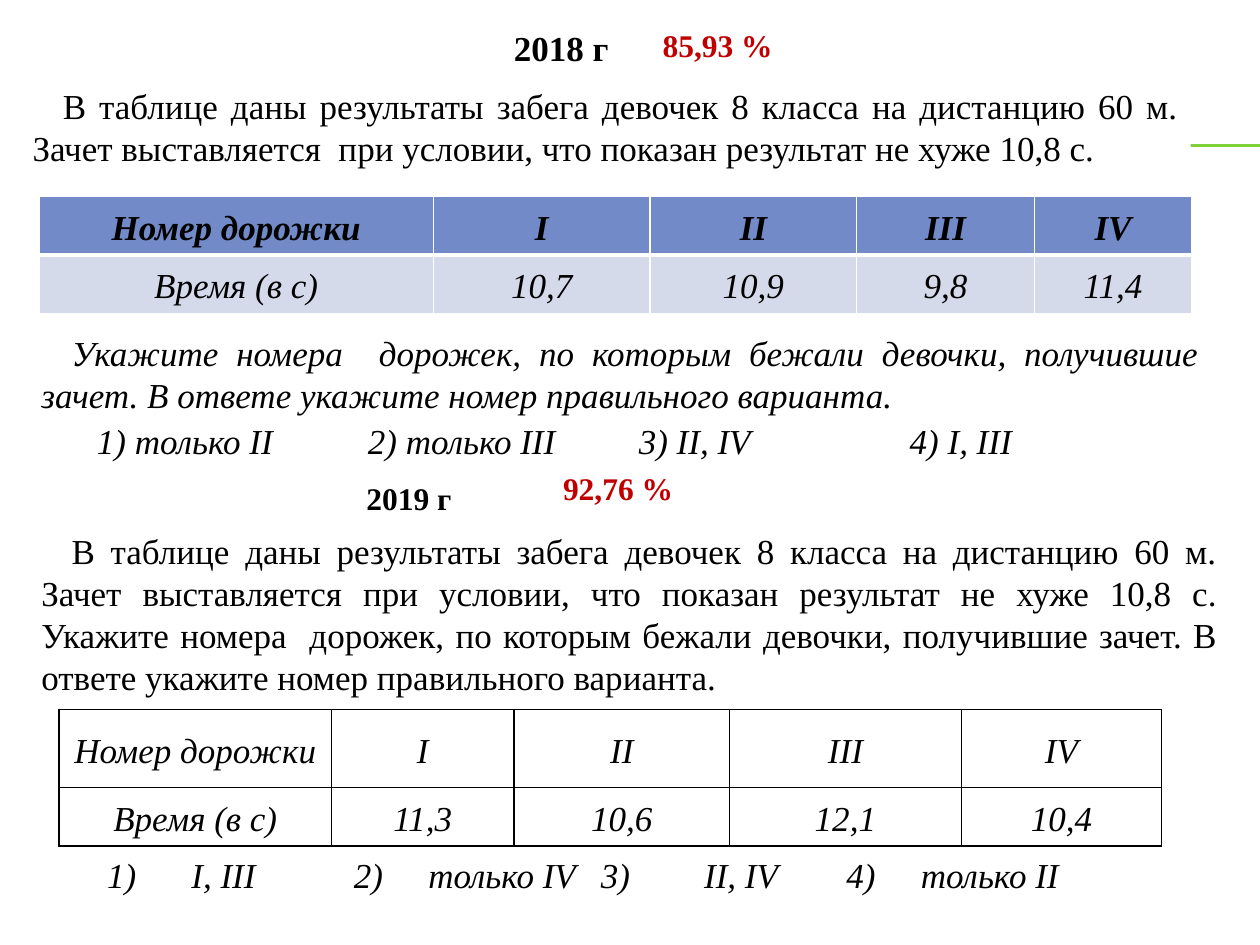
import pptx
import pptx.util
import pptx.dml.color
import pptx.enum.text
import pptx.oxml
import pptx.oxml.ns
import lxml.etree

Inches = pptx.util.Inches
Pt = pptx.util.Pt
Align = pptx.enum.text.PP_ALIGN
Anchor = pptx.enum.text.MSO_ANCHOR
Fit = pptx.enum.text.MSO_AUTO_SIZE
color = pptx.dml.color.RGBColor.from_string
qn = pptx.oxml.ns.qn

plain = {"name": "Times New Roman", "size": Pt(20), "bold": False, "italic": False}
slant = plain | {"italic": True}
strong = plain | {"bold": True}
small = strong | {"size": Pt(18)}
head = slant | {"bold": True}

left = {"alignment": Align.LEFT}
block = {"alignment": Align.JUSTIFY}
center = {"alignment": Align.CENTER, "line_spacing": 1.15, "space_before": Pt(3.4)}


def write(frame, text, font, layout, ink="000000", indent=0):
    """Put one formatted paragraph in a text frame."""
    para = frame.paragraphs[0]
    for key, value in layout.items():
        setattr(para, key, value)
    if indent:
        para._p.get_or_add_pPr().set("indent", str(Inches(indent)))
    run = para.add_run()
    run.text = text
    for key, value in font.items():
        setattr(run.font, key, value)
    run.font.color.rgb = color(ink)


def grid(at, cols, rows, texts, fonts, layout, pads, fills, edge=None, rule=1, indents={}):
    """Add a table; rule is the width in points of the line under row one."""
    size = [Inches(v) for v in (*at, sum(cols), sum(rows))]
    table = slide.shapes.add_table(len(rows), len(cols), *size).table
    table.first_row = table.horz_banding = False
    for col, width in zip(table.columns, cols):
        col.width = Inches(width)
    for r, row in enumerate(table.rows):
        row.height = Inches(rows[r])
        for c, cell in enumerate(row.cells):
            cell.margin_left = cell.margin_right = Inches(pads[0])
            cell.margin_top = cell.margin_bottom = Inches(pads[1])
            cell.vertical_anchor = Anchor.MIDDLE if edge else Anchor.TOP
            write(cell.text_frame, texts[r][c], fonts[r], layout, indent=indents.get(c, 0))
            if not edge:
                cell.fill.background()
                continue
            props = cell._tc.get_or_add_tcPr()
            for side in "LRTB":
                inner = (r, side) in ((0, "B"), (1, "T"))
                line = lxml.etree.SubElement(props, qn("a:ln" + side))
                line.set("w", str(Pt(rule if inner else 1)))
                fill = lxml.etree.SubElement(line, qn("a:solidFill"))
                lxml.etree.SubElement(fill, qn("a:srgbClr")).set("val", edge)
            cell.fill.solid()
            cell.fill.fore_color.rgb = color(fills[r])


deck = pptx.Presentation()
deck.slide_width, deck.slide_height = Inches(10), Inches(7.5)
slide = deck.slides.add_slide(deck.slide_layouts[6])

for y in (1.15, 1.16):
    line = slide.shapes.add_connector(1, Inches(0.56), Inches(y), Inches(10), Inches(y))
    line.line.color.rgb = color("7FD13B")
    line.line.width = Pt(0.75)
    lxml.etree.SubElement(line._element.spPr, qn("a:effectLst"))

# Task texts
intro = "В таблице даны результаты забега девочек 8 класса на дистанцию 60 м. Зачет выставляется "
limit = "при условии, что показан результат не хуже 10,8 с."
ask = ("Укажите номера  дорожек, по которым бежали девочки, получившие зачет. "
       "В ответе укажите номер правильного варианта.")
tasks = [
    ((0.16, 0.62, 9.29, 0.77), intro + " " + limit, plain),
    ((0.23, 2.58, 9.38, 0.77), ask, slant),
    ((0.23, 4.14, 9.53, 1.45), intro + limit + " " + ask, plain),
]
for at, text, font in tasks:
    box = slide.shapes.add_textbox(*[Inches(v) for v in at])
    box.fill.solid()
    box.fill.fore_color.rgb = color("FFFFFF")
    box.text_frame.word_wrap = True
    box.text_frame.vertical_anchor = Anchor.MIDDLE
    write(box.text_frame, text, font, block, indent=0.24)

# Years and pass rates
labels = [
    ((3.98, 0.16, 1.02, 0.44), "2018 г", strong, "000000"),
    ((5.16, 0.16, 1.09, 0.4), "85,93 %", small, "C00000"),
    ((2.81, 3.75, 0.88, 0.4), "2019 г", small, "000000"),
    ((4.37, 3.67, 1.09, 0.4), "92,76 %", small, "C00000"),
]
for at, text, font, ink in labels:
    box = slide.shapes.add_textbox(*[Inches(v) for v in at])
    box.text_frame.word_wrap = False
    box.text_frame.auto_size = Fit.SHAPE_TO_FIT_TEXT
    write(box.text_frame, text, font, left, ink)

# Race results
lanes = ["Номер дорожки", "I", "II", "III", "IV"]
time = "Время (в с)"
grid((0.31, 1.56), [3.13, 1.72, 1.64, 1.41, 1.25], [0.46, 0.46],
     [lanes, [time, "10,7", "10,9", "9,8", "11,4"]], [head, slant],
     center, (0.04, 0.04), ["738AC8", "D5DAEB"], "FFFFFF", 3)
grid((0.47, 5.63), [2.16, 1.45, 1.71, 1.84, 1.59], [0.62, 0.46],
     [lanes, [time, "11,3", "10,6", "12,1", "10,4"]], [slant, slant],
     center, (0.04, 0.04), ["FFFFFF", "FFFFFF"], "000000")

# Answer choices
grid((0.7, 3.36), [2.15] * 4, [0.33],
     [["1) только II", "2) только III", "3) II, IV", "4) I, III"]],
     [slant], block, (0.07, 0), None)
grid((0.78, 6.8), [0.67, 1.29, 0.57, 1.39, 0.58, 1.37, 0.59, 1.36], [0.33],
     [["1)", "I, III", "2)", "только IV", "3)", "II, IV", "4)", "только II"]],
     [slant], block, (0.07, 0), None, indents={3: 0.02, 5: 0.24})

deck.save("out.pptx")
